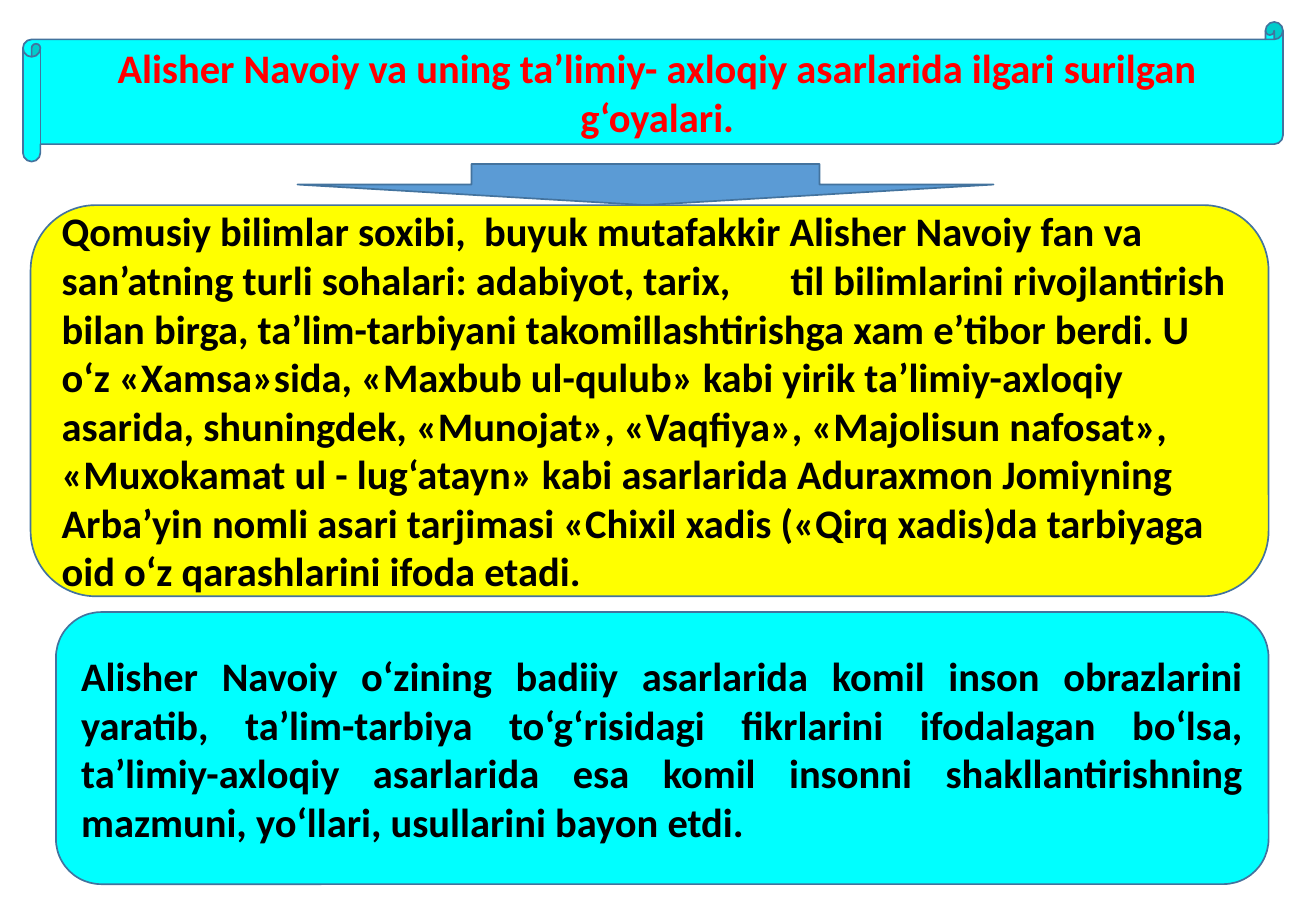
from pptx import Presentation
from pptx.dml.color import RGBColor
from pptx.enum.shapes import MSO_SHAPE
from pptx.enum.text import MSO_ANCHOR, PP_ALIGN
from pptx.util import Cm, Pt

SCROLL = MSO_SHAPE.HORIZONTAL_SCROLL
ARROW = MSO_SHAPE.DOWN_ARROW
ROUNDED = MSO_SHAPE.ROUNDED_RECTANGLE
LEFT, CENTER, JUSTIFY = PP_ALIGN.LEFT, PP_ALIGN.CENTER, PP_ALIGN.JUSTIFY
MIDDLE = MSO_ANCHOR.MIDDLE

CYAN, YELLOW, BLUE, OUTLINE = "00FFFF", "FFFF00", "5B9BD5", "43739E"
RED, BLACK = "FF0000", "000000"

TITLE = "Alisher Navoiy va uning ta’limiy- axloqiy asarlarida ilgari surilgan g‘oyalari."
WORKS = (
    "Qomusiy bilimlar soxibi,  buyuk mutafakkir Alisher Navoiy fan va san’atning "
    "turli sohalari: adabiyot, tarix,\ttil bilimlarini rivojlantirish bilan birga, "
    "ta’lim-tarbiyani takomillashtirishga xam e’tibor berdi. U o‘z «Xamsa»sida, "
    "«Maxbub ul-qulub» kabi yirik ta’limiy-axloqiy asarida, shuningdek, «Munojat», "
    "«Vaqfiya», «Majolisun nafosat», «Muxokamat ul - lug‘atayn» kabi asarlarida "
    "Aduraxmon Jomiyning Arba’yin nomli asari tarjimasi «Chixil xadis («Qirq xadis)da "
    "tarbiyaga oid o‘z qarashlarini ifoda etadi."
)
IDEAL = (
    "Alisher Navoiy o‘zining badiiy asarlarida komil inson obrazlarini yaratib, "
    "ta’lim-tarbiya to‘g‘risidagi fikrlarini ifodalagan bo‘lsa, ta’limiy-axloqiy "
    "asarlarida esa komil insonni shakllantirishning mazmuni, yo‘llari, usullarini "
    "bayon etdi."
)


def rgb(value):
    return RGBColor.from_string(value)


def write(sp, text, color=BLACK, align=LEFT, size=24, bold=True, font="Calibri"):
    tf = sp.text_frame
    tf.word_wrap = True
    tf.vertical_anchor = MIDDLE
    p = tf.paragraphs[0]
    p.alignment = align
    r = p.add_run()
    r.text = text
    r.font.name = font
    r.font.size = Pt(size)
    r.font.bold = bold
    r.font.color.rgb = rgb(color)


prs = Presentation()
prs.slide_width, prs.slide_height = Cm(27.51), Cm(19.05)
s = prs.slides.add_slide(prs.slide_layouts[6])

# Shape, left, top, width, height (cm), fill, text, text format
blocks = [
    (SCROLL, 0.48, 0.46, 26.34, 2.92, CYAN, TITLE, {"color": RED, "align": CENTER}),
    (ARROW, 6.22, 3.43, 14.55, 0.86, BLUE, "", {}),
    (ROUNDED, 1.17, 12.8, 25.35, 5.69, CYAN, IDEAL, {"align": JUSTIFY}),
    (ROUNDED, 0.64, 4.29, 25.88, 8.18, YELLOW, WORKS, {}),
]
for kind, left, top, width, height, fill, text, style in blocks:
    sp = s.shapes.add_shape(kind, Cm(left), Cm(top), Cm(width), Cm(height))
    sp.shadow.inherit = False
    sp.fill.solid()
    sp.fill.fore_color.rgb = rgb(fill)
    sp.line.color.rgb = rgb(OUTLINE)
    sp.line.width = Pt(1)
    if text:
        write(sp, text, **style)

prs.save("out.pptx")
